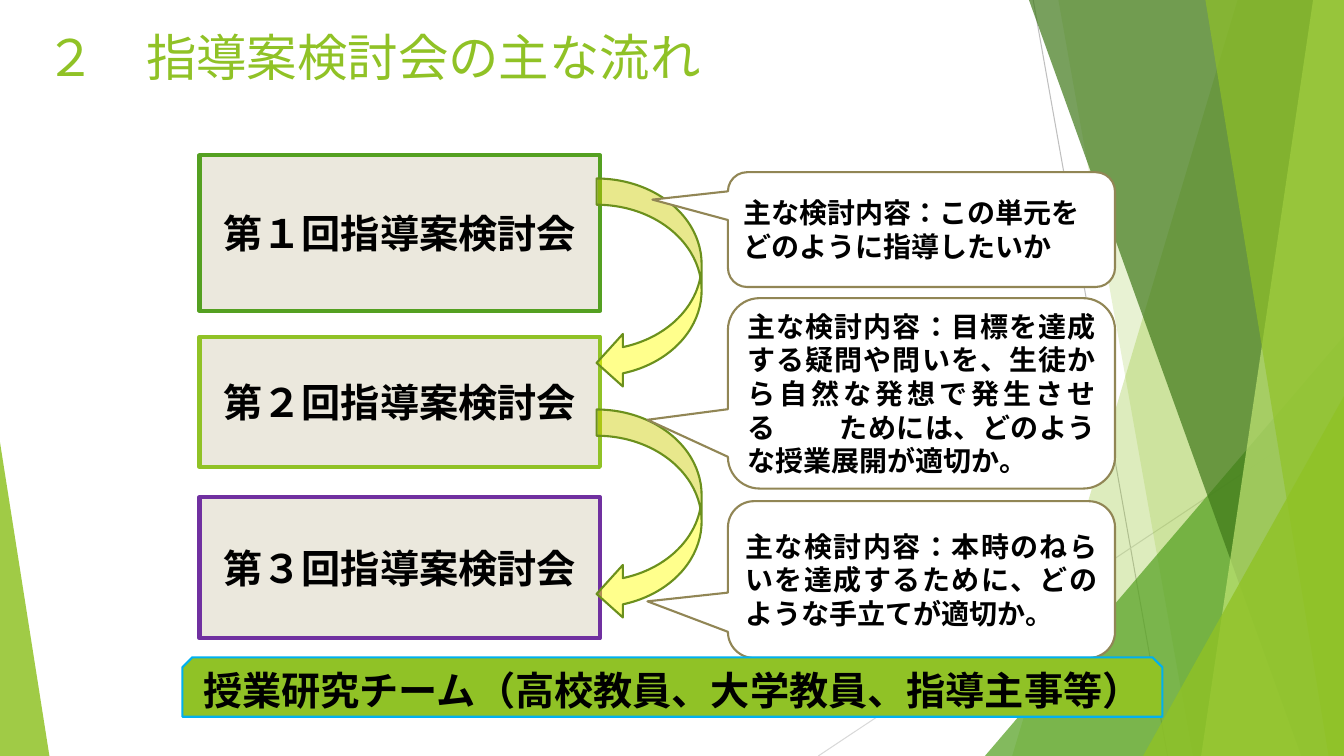
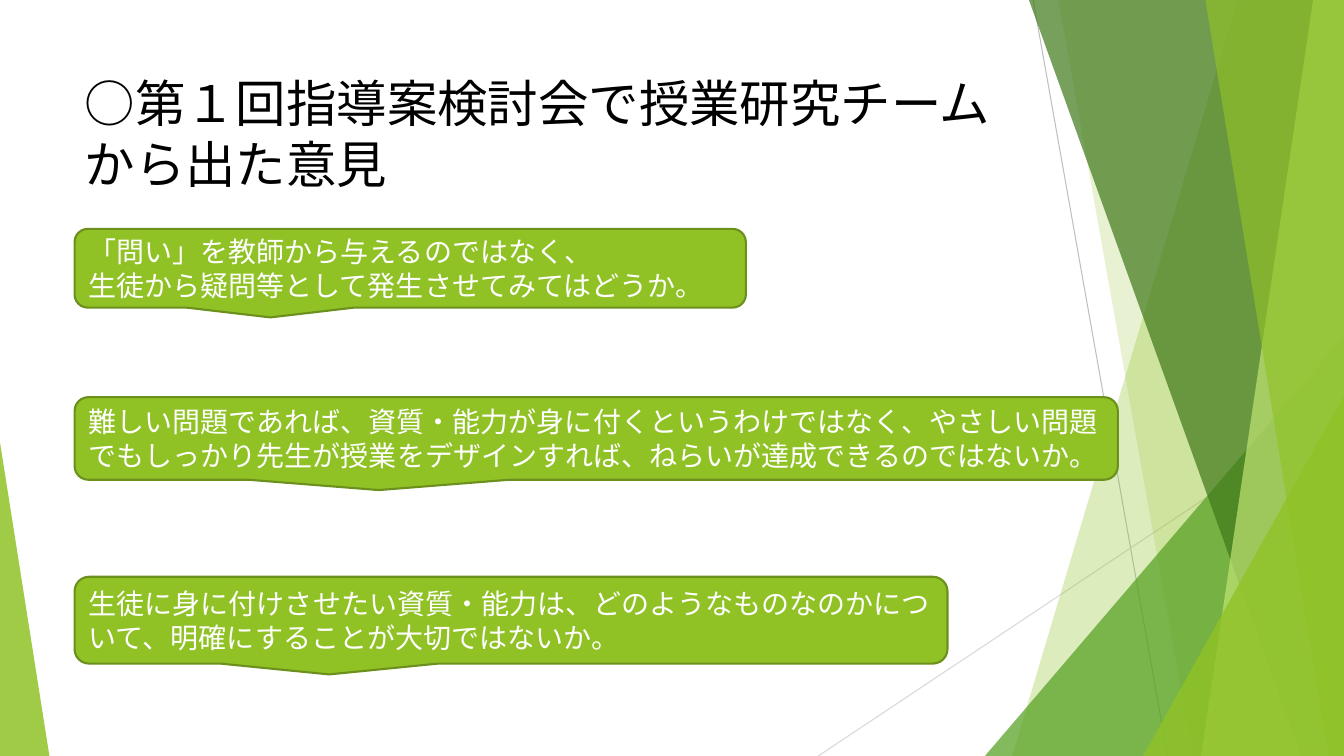
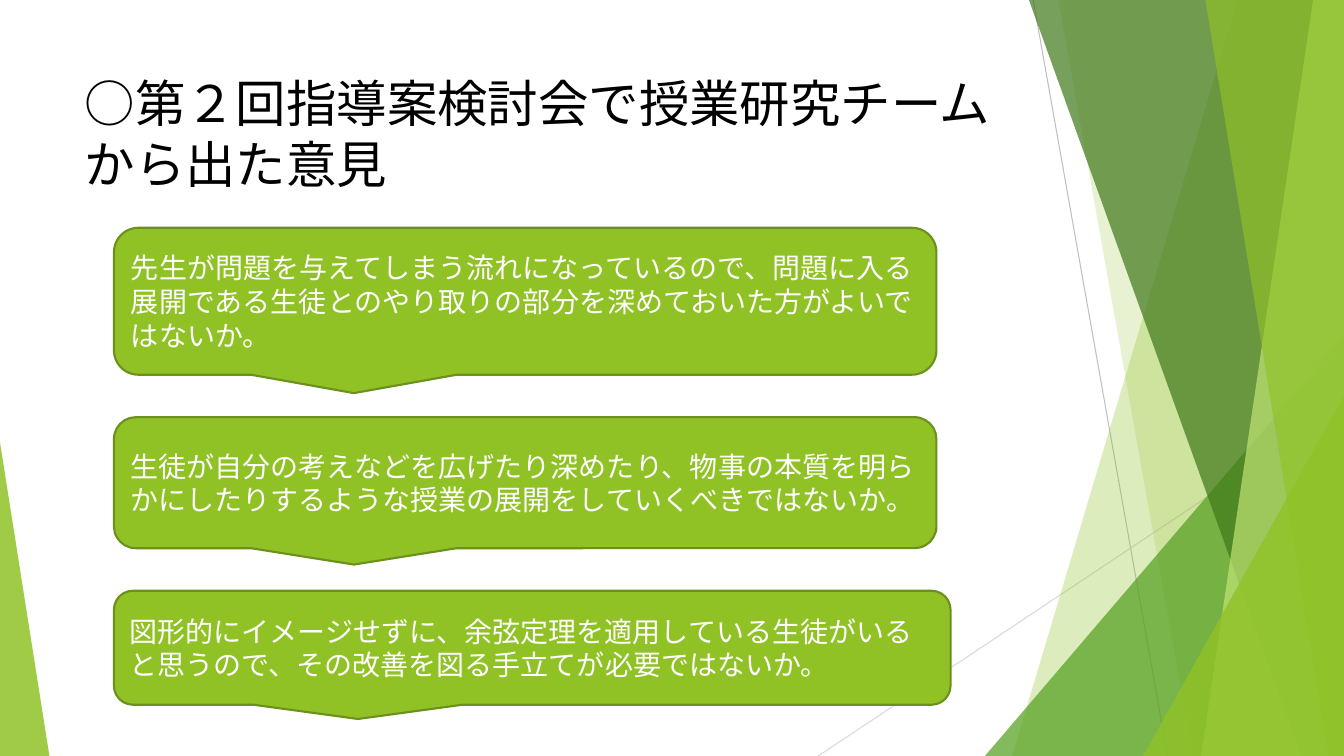
from pptx import Presentation
from pptx.dml.color import RGBColor
from pptx.enum.shapes import MSO_CONNECTOR, MSO_SHAPE as Preset
from pptx.enum.text import MSO_ANCHOR as Anchor, MSO_AUTO_SIZE, PP_ALIGN as Align
from pptx.oxml.ns import qn
from pptx.util import Pt
from lxml.etree import SubElement

WIDTH, HEIGHT = 960, 540
COLORS = {
    "green": "90C226", "leaf": "54A021", "forest": "3F7819", "lime": "C0E474",
    "olive": "6B901C", "sand": "D6D0B8", "khaki": "918655", "purple": "7030A0",
    "yellow": "FFFF00", "blue": "00B0F0", "white": "FFFFFF", "black": "000000",
    "gray": "BFBFBF", "silver": "D9D9D9",
}
EAST_ASIAN_FONT = "Cabin"


def color(name):
    return RGBColor.from_string(COLORS[name])


def place(shape, left, top, width, height):
    shape.left, shape.top = Pt(left), Pt(top)
    shape.width, shape.height = Pt(width), Pt(height)


def paint(shape, fill, opacity=100, line=None, line_width=1.5):
    shape.shadow.inherit = False
    shape.fill.solid()
    shape.fill.fore_color.rgb = color(fill)
    if opacity < 100:
        solid = shape.element.spPr.find(qn("a:solidFill"))
        SubElement(solid[0], qn("a:alpha"), val=str(opacity * 1000))
    if line:
        shape.line.color.rgb = color(line)
        shape.line.width = Pt(line_width)
    else:
        shape.line.fill.background()


def write(shape, text, size, font="Arial", ink="black", bold=False,
          align=Align.LEFT, anchor=Anchor.MIDDLE):
    frame = shape.text_frame
    frame.word_wrap = True
    frame.auto_size = MSO_AUTO_SIZE.NONE
    frame.vertical_anchor = anchor
    frame.text = text
    for paragraph in frame.paragraphs:
        paragraph.alignment = align
        paragraph.space_before = Pt(0)
        paragraph.font.size = Pt(size)
        paragraph.font.bold = bold
        paragraph.font.color.rgb = color(ink)
        paragraph.font.name = font
        defaults = paragraph._p.pPr.find(qn("a:defRPr"))
        defaults.set("lang", "ja-JP")
        SubElement(defaults, qn("a:ea"), typeface=EAST_ASIAN_FONT)


def add_preset(slide, preset, box, fill, opacity=100, line=None, line_width=1.5):
    shape = slide.shapes.add_shape(preset, *map(Pt, box))
    paint(shape, fill, opacity, line, line_width)
    return shape


def add_line(slide, points, ink):
    connector = slide.shapes.add_connector(MSO_CONNECTOR.STRAIGHT, *map(Pt, points))
    connector.line.color.rgb = color(ink)
    connector.line.width = Pt(0.75)
    SubElement(connector.element.spPr, qn("a:effectLst"))


def add_band(slide, top_x, bottom_x, fill, opacity):
    builder = slide.shapes.build_freeform(Pt(top_x), 0)
    corners = [(WIDTH, 0), (WIDTH, HEIGHT), (bottom_x, HEIGHT)]
    builder.add_line_segments([(Pt(x), Pt(y)) for x, y in corners])
    paint(builder.convert_to_shape(), fill, opacity)


def add_corner(slide, left, top, width, peak, fill, opacity):
    box = (left, top, width, HEIGHT - top)
    shape = add_preset(slide, Preset.ISOSCELES_TRIANGLE, box, fill, opacity)
    shape.adjustments[0] = peak


def add_callout(slide, box, text, fill="green", line="olive", tail=None, **style):
    shape = add_preset(slide, Preset.ROUNDED_RECTANGULAR_CALLOUT, box, fill, line=line)
    if tail:
        shape.adjustments[0], shape.adjustments[1] = tail
    write(shape, text, 20, **style)


def add_title_slide(presentation, layout, box, text, **style):
    slide = presentation.slides.add_slide(layout)
    place(slide.shapes.title, *box)
    write(slide.shapes.title, text, 36, anchor=Anchor.TOP, **style)
    return slide


def move_backdrop_to_layout(slide, layout):
    add_line(slide, (738, 0, 834, HEIGHT), "gray")
    add_line(slide, (WIDTH, 290, 584.5, HEIGHT), "silver")
    add_band(slide, 884, 723, "green", 30)
    add_band(slide, 756, 852, "green", 20)
    add_corner(slide, 703.5, 240, 256.5, 1, "leaf", 72)
    add_band(slide, 735, 929.5, "forest", 70)
    add_band(slide, 938, 858, "lime", 70)
    add_band(slide, 861, 949, "green", 65)
    add_corner(slide, 816.5, 283, 143.5, 1, "green", 80)
    add_corner(slide, 0, 316, 35.3, 0, "green", 85)
    for shape in list(slide.shapes):
        if not shape.is_placeholder:
            layout.shapes.element.append(shape.element)


def fill_flow_slide(slide):
    meetings = [
        ("第１回指導案検討会", 111, 111, "leaf"),
        ("第２回指導案検討会", 240.5, 93, "green"),
        ("第３回指導案検討会", 355, 101, "purple"),
    ]
    for text, top, height, line in meetings:
        box = (142.5, top, 286, height)
        shape = add_preset(slide, Preset.RECTANGLE, box, "sand", 48, line, 3)
        write(shape, text, 28, bold=True, align=Align.CENTER)
    for top in (127.5, 292.5):
        box = (426.2, top, 75, 150.5)
        add_preset(slide, Preset.CURVED_LEFT_ARROW, box, "yellow", 45, "olive")
    topics = [
        ("この単元をどのように指導したいか", 123, 82, (-0.695, -0.261), "Cabin", Align.LEFT),
        ("目標を達成する疑問や問いを、生徒から自然な発想で発生させる　　 ためには、"
         "どのような授業展開が適切か。", 213, 136, (-0.708, 0.139), "Arial", Align.JUSTIFY),
        ("本時のねらいを達成するために、どのような手立てが適切か。",
         358, 112, (-0.708, 0.139), "Arial", Align.JUSTIFY),
    ]
    for text, top, height, tail, font, align in topics:
        add_callout(slide, (520, top, 276.5, height), "主な検討内容：" + text,
                    "white", "khaki", tail, font=font, bold=True, align=align)
    team = add_preset(slide, Preset.SNIP_2_SAME_RECTANGLE, (130.3, 469.5, 700, 42.5),
                      "green", line="blue")
    write(team, "授業研究チーム（高校教員、大学教員、指導主事等）", 28,
          font="Cabin", bold=True, align=Align.CENTER)


def add_opinion_slide(presentation, layout, number, left, font, opinions):
    slide = add_title_slide(presentation, layout, (53.3, 48.2, 677, 103.7),
                            f"○第{number}回指導案検討会で授業研究チームから出た意見")
    for text, top, width, height in opinions:
        add_callout(slide, (left, top, width, height), text, font=font, ink="white")


def main():
    presentation = Presentation()
    presentation.slide_width, presentation.slide_height = Pt(WIDTH), Pt(HEIGHT)
    layout = presentation.slide_layouts.get_by_name("Title Only")
    flow = add_title_slide(presentation, layout, (25.2, 15.2, 535.7, 55.4),
                           "２　指導案検討会の主な流れ",
                           font="Noto Sans CJK JP", ink="green")
    move_backdrop_to_layout(flow, layout)
    fill_flow_slide(flow)
    add_opinion_slide(presentation, layout, "１", 53.3, "Arial", [
        ("「問い」を教師から与えるのではなく、\n"
         "生徒から疑問等として発生させてみてはどうか。", 163.5, 479.5, 56.2),
        ("難しい問題であれば、資質・能力が身に付くというわけではなく、やさしい問題でも"
         "しっかり先生が授業をデザインすれば、ねらいが達成できるのではないか。",
         283.7, 745.2, 59),
        ("生徒に身に付けさせたい資質・能力は、どのようなものなのかについて、"
         "明確にすることが大切ではないか。", 412, 623.5, 62),
    ])
    add_opinion_slide(presentation, layout, "２", 81.4, "Cabin", [
        ("先生が問題を与えてしまう流れになっているので、問題に入る展開である"
         "生徒とのやり取りの部分を深めておいた方がよいではないか。", 162.7, 587.5, 105),
        ("生徒が自分の考えなどを広げたり深めたり、物事の本質を明らかにしたりするような"
         "授業の展開をしていくべきではないか。", 298, 587.5, 93.6),
        ("図形的にイメージせずに、余弦定理を適用している生徒がいると思うので、"
         "その改善を図る手立てが必要ではないか。", 422, 597.6, 81.4),
    ])
    presentation.save("out.pptx")


if __name__ == "__main__":
    main()
